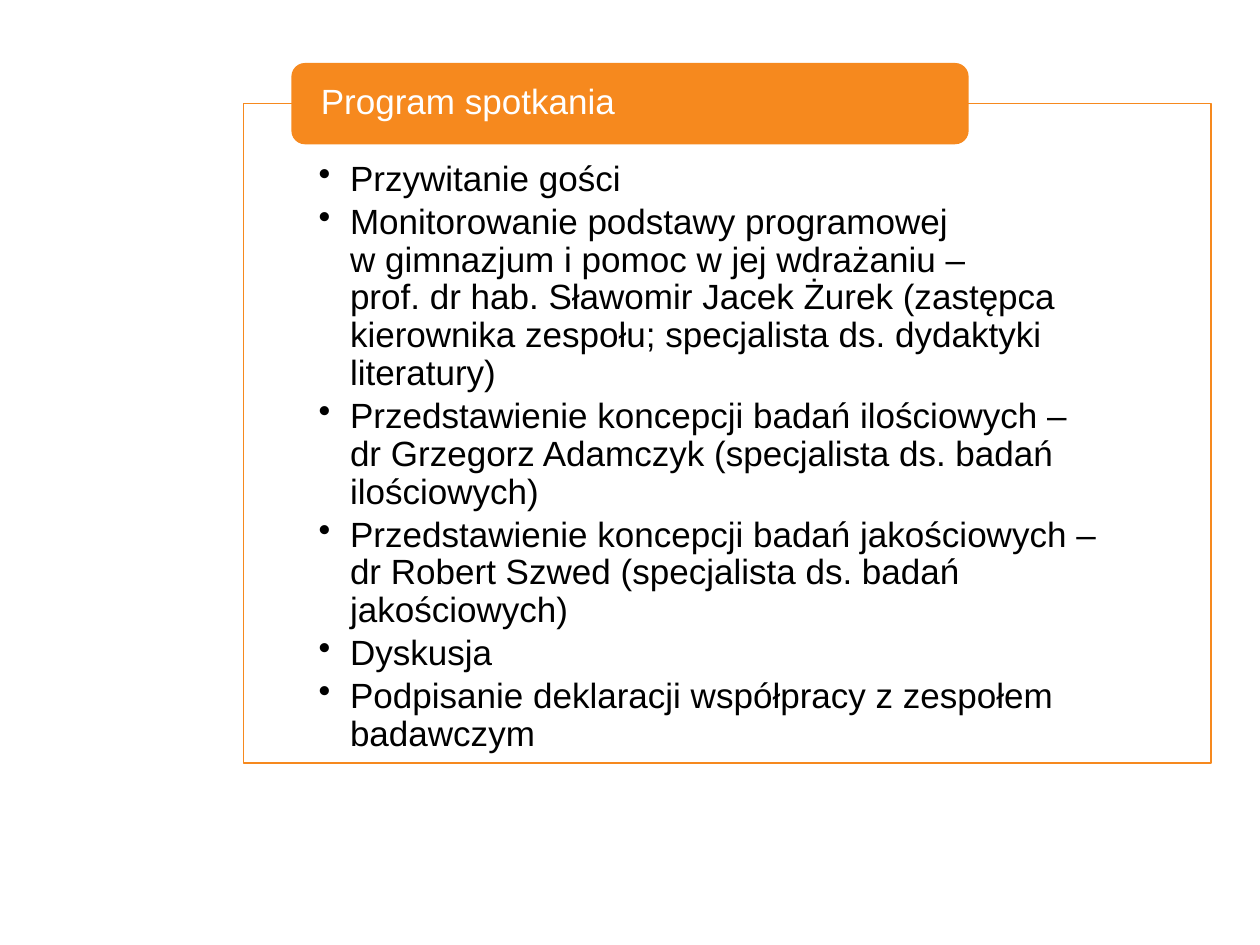
import lxml.etree
import pptx
import pptx.dml.color
import pptx.enum.shapes
import pptx.enum.text
import pptx.oxml.ns
import pptx.util

Pt = pptx.util.Pt
COLORS = {"accent": "F6891E", "panel": "FFFFFF", "title": "FFFFFF", "body": "000000"}
AGENDA = [
    "Przywitanie gości",
    "Monitorowanie podstawy programowej\vw gimnazjum i pomoc w jej wdrażaniu –\v"
    "prof. dr hab. Sławomir Jacek Żurek (zastępca kierownika zespołu; "
    "specjalista ds. dydaktyki literatury)",
    "Przedstawienie koncepcji badań ilościowych –\v"
    "dr Grzegorz Adamczyk (specjalista ds. badań ilościowych)",
    "Przedstawienie koncepcji badań jakościowych –\v"
    "dr Robert Szwed (specjalista ds. badań jakościowych)",
    "Dyskusja",
    "Podpisanie deklaracji współpracy z zespołem badawczym",
]


class AgendaSlide:
    """Hold the style and the slide, and draw the agenda elements."""

    font_name = "Arial"
    font_size = 20
    bullet_indent = 18

    def __init__(self, slide):
        self.slide = slide

    def color(self, name):
        return pptx.dml.color.RGBColor.from_string(COLORS[name])

    def box(self, kind, bounds, fill, insets, anchor):
        shape = self.slide.shapes.add_shape(kind, *map(Pt, bounds))
        shape.shadow.inherit = False
        shape.fill.solid()
        shape.fill.fore_color.rgb = self.color(fill)
        shape.line.fill.background()
        frame = shape.text_frame
        frame.word_wrap = True
        frame.vertical_anchor = anchor
        frame.margin_left, frame.margin_top, frame.margin_right, frame.margin_bottom = map(Pt, insets)
        return shape

    def format_paragraph(self, paragraph, color, space_after):
        paragraph.alignment = pptx.enum.text.PP_ALIGN.LEFT
        paragraph.line_spacing = 0.9
        paragraph.space_after = Pt(space_after)
        for run in paragraph.runs:
            run.font.name = self.font_name
            run.font.size = Pt(self.font_size)
            run.font.color.rgb = self.color(color)

    def bullet(self, paragraph):
        properties = paragraph._p.get_or_add_pPr()
        properties.set("marL", str(Pt(self.bullet_indent)))
        properties.set("indent", str(-Pt(self.bullet_indent)))
        mark = lxml.etree.SubElement(properties, pptx.oxml.ns.qn("a:buChar"))
        mark.set("char", "•")

    def panel(self, bounds, items):
        shape = self.box(
            pptx.enum.shapes.MSO_SHAPE.RECTANGLE, bounds, "panel",
            (43, 33, 43, 11.5), pptx.enum.text.MSO_ANCHOR.TOP,
        )
        fill_color = shape._element.spPr.find(".//" + pptx.oxml.ns.qn("a:srgbClr"))
        lxml.etree.SubElement(fill_color, pptx.oxml.ns.qn("a:alpha")).set("val", "90000")
        shape.line.color.rgb = self.color("accent")
        shape.line.width = Pt(0.75)
        frame = shape.text_frame
        frame.text = "\n".join(items)
        for paragraph in frame.paragraphs:
            paragraph.level = 1
            self.bullet(paragraph)
            self.format_paragraph(paragraph, "body", 3)

    def header(self, bounds, text):
        shape = self.box(
            pptx.enum.shapes.MSO_SHAPE.ROUNDED_RECTANGLE, bounds, "accent",
            (14.5, 0, 14.5, 0), pptx.enum.text.MSO_ANCHOR.MIDDLE,
        )
        shape.text_frame.text = text
        self.format_paragraph(shape.text_frame.paragraphs[0], "title", 7)


def main():
    presentation = pptx.Presentation()
    presentation.slide_width = Pt(720)
    presentation.slide_height = Pt(540)
    agenda = AgendaSlide(presentation.slides.add_slide(presentation.slide_layouts[6]))
    agenda.panel((139, 59, 553, 377), AGENDA)
    agenda.header((166.5, 36, 387, 46.5), "Program spotkania")
    presentation.save("out.pptx")


if __name__ == "__main__":
    main()
